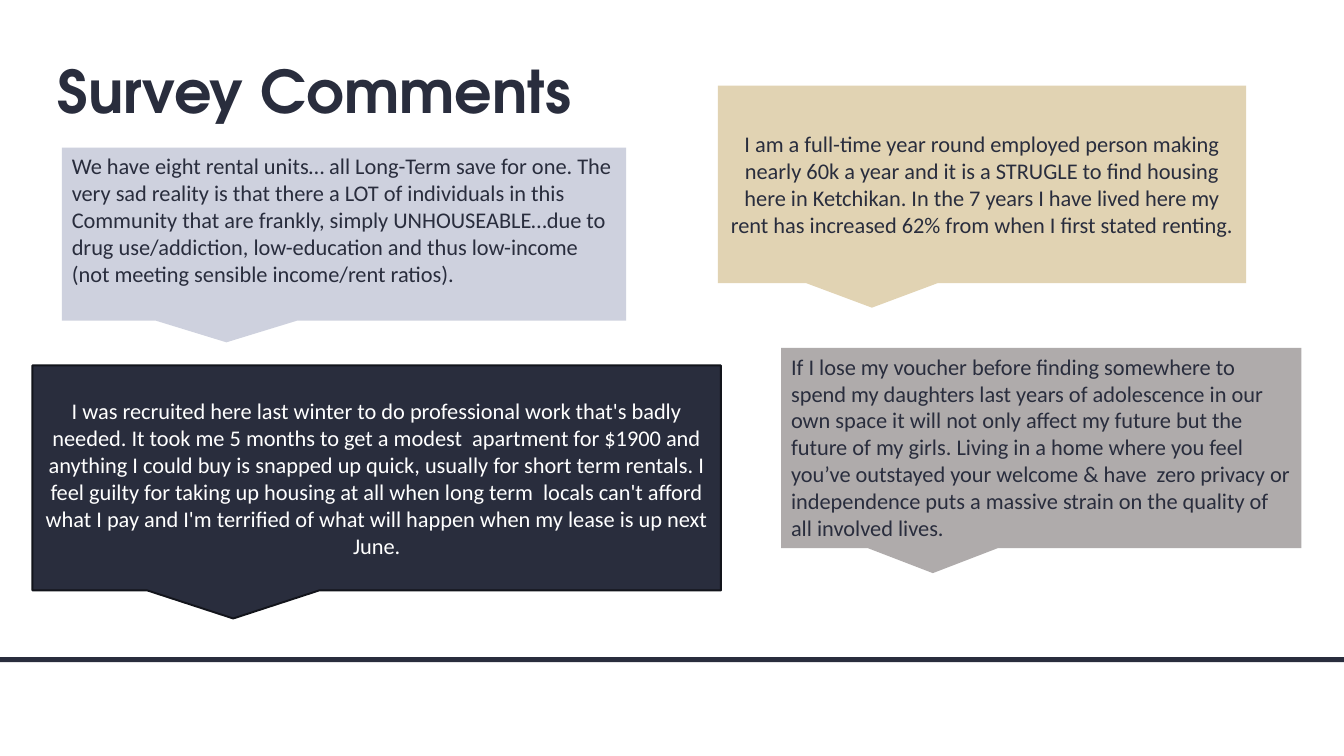
from pptx import Presentation
from pptx.dml.color import RGBColor
from pptx.enum.shapes import MSO_SHAPE as Shape
from pptx.enum.text import MSO_ANCHOR as Anchor, MSO_AUTO_SIZE as AutoSize, PP_ALIGN as Align
from pptx.util import Pt

NAVY = RGBColor(0x29, 0x2D, 0x3D)
OUTLINE = RGBColor(0x12, 0x14, 0x1B)
LAVENDER = RGBColor(0xCE, 0xD1, 0xDE)
SAND = RGBColor(0xE1, 0xD3, 0xB3)
GRAY = RGBColor(0xAF, 0xAB, 0xAB)
WHITE = RGBColor(0xFF, 0xFF, 0xFF)

SLIDE_WIDTH, SLIDE_HEIGHT = 960, 540
TITLE = "Survey Comments"
TITLE_BOX = (33.84, 28.8, 558.72, 64.8)
RULE_BOX = (0, 469.44, SLIDE_WIDTH, 3.6)

TOP_LEFT = (Anchor.TOP, Align.LEFT)
CENTERED = (Anchor.MIDDLE, Align.CENTER)

COMMENTS = [
    ("We have eight rental units… all Long-Term save for one. The very sad reality is that there "
     "a LOT of individuals in this Community that are frankly, simply UNHOUSEABLE…due to drug "
     "use/addiction, low-education and thus low-income (not meeting sensible income/rent ratios).",
     (44.2, 105.4, 403, 123.7), LAVENDER, None, NAVY, TOP_LEFT),
    ("I am a full-time year round employed person making nearly 60k a year and it is a STRUGLE "
     "to find housing here in Ketchikan. In the 7 years I have lived here my rent has increased "
     "62% from when I first stated renting.",
     (512.8, 61.2, 377.3, 141), SAND, None, NAVY, CENTERED),
    ("I was recruited here last winter to do professional work that's badly needed. It took me "
     "5 months to get a modest  apartment for $1900 and anything I could buy is snapped up quick, "
     "usually for short term rentals. I feel guilty for taking up housing at all when long term  "
     "locals can't afford what I pay and I'm terrified of what will happen when my lease is up "
     "next June.",
     (23.2, 261, 491.8, 160.7), NAVY, OUTLINE, WHITE, CENTERED),
    ("If I lose my voucher before finding somewhere to spend my daughters last years of "
     "adolescence in our own space it will not only affect my future but the future of my girls. "
     "Living in a home where you feel you’ve outstayed your welcome & have  zero privacy or "
     "independence puts a massive strain on the quality of all involved lives.",
     (558, 248.5, 371.5, 143), GRAY, None, NAVY, TOP_LEFT),
]


def format_text(frame, text, font_name, size, color, anchor, align, bold=False):
    frame.word_wrap = True
    frame.auto_size = AutoSize.NONE
    frame.vertical_anchor = anchor
    frame.text = text
    paragraph = frame.paragraphs[0]
    paragraph.alignment = align
    font = paragraph.runs[0].font
    font.name = font_name
    font.size = Pt(size)
    font.bold = bold
    font.color.rgb = color
    return paragraph


def add_block(slide, kind, box, fill, line=None):
    shape = slide.shapes.add_shape(kind, *map(Pt, box))
    shape.shadow.inherit = False
    shape.fill.solid()
    shape.fill.fore_color.rgb = fill
    if line is None:
        shape.line.fill.background()
    else:
        shape.line.color.rgb = line
        shape.line.width = Pt(1.35)
    return shape


def main():
    presentation = Presentation()
    presentation.slide_width = Pt(SLIDE_WIDTH)
    presentation.slide_height = Pt(SLIDE_HEIGHT)
    slide = presentation.slides.add_slide(presentation.slide_layouts[5])

    title = slide.shapes.title
    title.left, title.top, title.width, title.height = map(Pt, TITLE_BOX)
    heading = format_text(title.text_frame, TITLE, "TeX Gyre Adventor", 42, NAVY,
                          Anchor.BOTTOM, Align.LEFT, bold=True)
    heading.line_spacing = 0.9

    add_block(slide, Shape.RECTANGLE, RULE_BOX, NAVY)
    for text, box, fill, line, color, (anchor, align) in COMMENTS:
        callout = add_block(slide, Shape.RECTANGULAR_CALLOUT, box, fill, line)
        format_text(callout.text_frame, text, "Calibri", 16, color, anchor, align)

    presentation.save("out.pptx")


if __name__ == "__main__":
    main()
